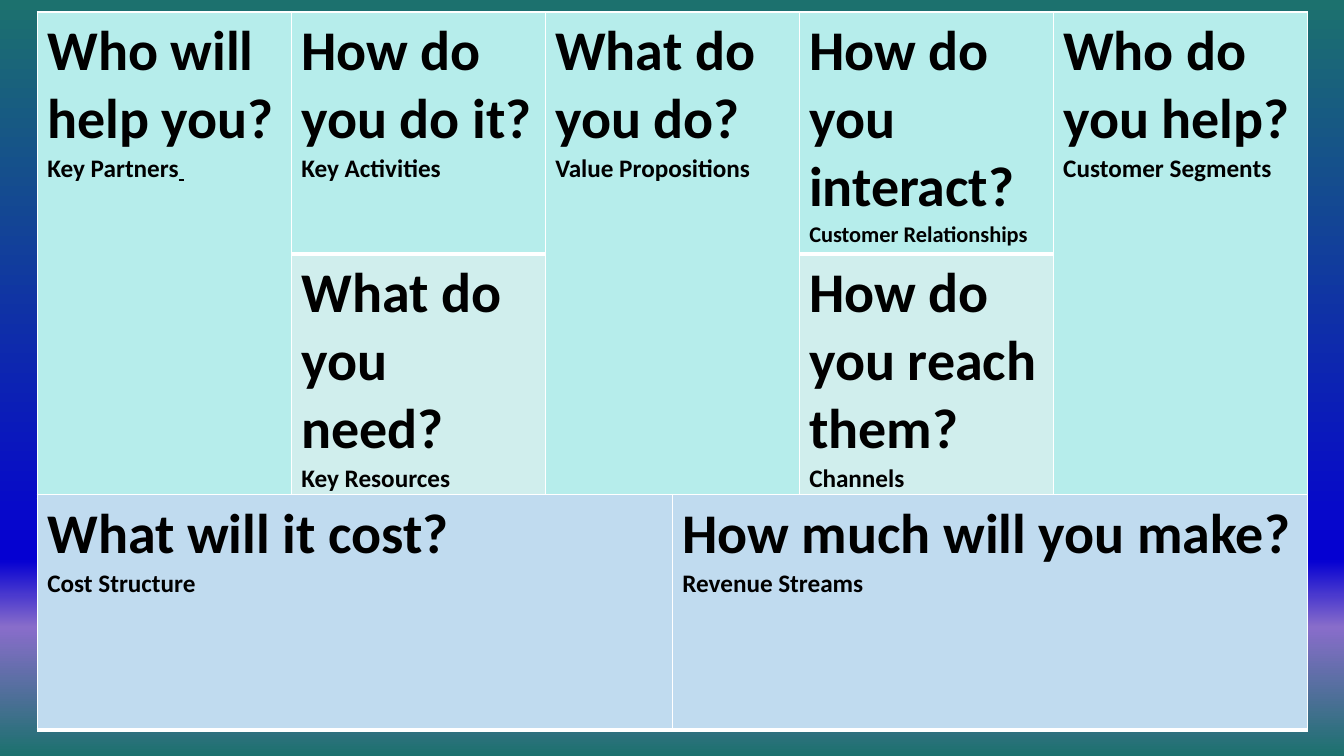
from dataclasses import dataclass

from lxml.etree import SubElement
from pptx import Presentation
from pptx.dml.color import RGBColor
from pptx.oxml.ns import qn
from pptx.util import Cm, Pt


@dataclass(frozen=True)
class Theme:
    font: str = "Calibri"
    text: str = "000000"
    border: str = "FFFFFF"
    aqua: str = "B6EDEB"
    pale_aqua: str = "D0EEED"
    blue: str = "C0DBEF"
    question_size: int = 40
    label_size: int = 18
    small_label_size: int = 16
    thin: int = 1
    thick: int = 3
    backdrop: tuple = ((0, "1C716E"), (74, "0500D2"), (83, "886DCA"), (100, "1C716E"))


class CanvasSlide:
    def __init__(self, slide, theme):
        self.slide = slide
        self.theme = theme

    def gradient_background(self):
        fill = self.slide.background.fill
        fill.gradient()
        fill.gradient_angle = 270
        stops = next(self.slide.element.iter(qn("a:gsLst")))
        for stop in list(stops):
            stops.remove(stop)
        for percent, color in self.theme.backdrop:
            stop = SubElement(stops, qn("a:gs"), pos=str(percent * 1000))
            SubElement(stop, qn("a:srgbClr"), val=color)

    def grid(self, left, top, width, row_height, rows, columns):
        table = self.slide.shapes.add_table(
            rows, columns, left, top, width, row_height * rows).table
        table.first_row = table.horz_banding = False
        for row in table.rows:
            row.height = row_height
        return table

    def borders(self, cell, top, bottom):
        thin = self.theme.thin
        properties = cell._tc.get_or_add_tcPr()
        for side, points in (("L", thin), ("R", thin), ("T", top), ("B", bottom)):
            line = SubElement(properties, qn(f"a:ln{side}"), w=str(Pt(points)))
            fill = SubElement(line, qn("a:solidFill"))
            SubElement(fill, qn("a:srgbClr"), val=self.theme.border)

    def paint(self, cell, color, top, bottom):
        self.borders(cell, top, bottom)
        cell.fill.solid()
        cell.fill.fore_color.rgb = RGBColor.from_string(color)

    def block(self, cell, question, label, label_size=None):
        cell.text_frame.text = f"{question}\n{label}"
        sizes = (self.theme.question_size, label_size or self.theme.label_size)
        for paragraph, size in zip(cell.text_frame.paragraphs, sizes):
            for run in paragraph.runs:
                self.format_run(run, size)

    def format_run(self, run, size):
        run.font.name = self.theme.font
        run.font.size = Pt(size)
        run.font.bold = True
        run.font.color.rgb = RGBColor.from_string(self.theme.text)

    def underlined_space(self, cell):
        run = cell.text_frame.paragraphs[-1].add_run()
        run.text = " "
        self.format_run(run, self.theme.label_size)
        run.font.underline = True


def main():
    theme = Theme()
    presentation = Presentation()
    presentation.slide_width, presentation.slide_height = Cm(33.87), Cm(19.05)
    canvas = CanvasSlide(
        presentation.slides.add_slide(presentation.slide_layouts[6]), theme)
    canvas.gradient_background()
    left, width = Cm(0.94), Cm(32)

    # Business model: five columns, three of them full height
    model = canvas.grid(left, Cm(0.3), width, Cm(5.89), rows=2, columns=5)
    for column in range(5):
        canvas.paint(model.cell(0, column), theme.aqua, theme.thin, theme.thick)
        canvas.paint(model.cell(1, column), theme.pale_aqua, theme.thick, theme.thin)
    for column in (0, 2, 4):
        model.cell(0, column).merge(model.cell(1, column))

    partners = model.cell(0, 0)
    canvas.block(partners, "Who will help you?", "Key Partners")
    canvas.underlined_space(partners)
    canvas.block(model.cell(0, 1), "How do you do it?", "Key Activities")
    canvas.block(model.cell(1, 1), "What do you need?", "Key Resources")
    canvas.block(model.cell(0, 2), "What do you do?", "Value Propositions")
    canvas.block(model.cell(0, 3), "How do you interact?", "Customer Relationships",
                 theme.small_label_size)
    canvas.block(model.cell(1, 3), "How do you reach them?", "Channels")
    canvas.block(model.cell(0, 4), "Who do you help?", "Customer Segments")

    # Finances: cost and revenue
    finances = canvas.grid(left, Cm(12.47), width, Cm(5.92), rows=1, columns=2)
    topics = (("What will it cost?", "Cost Structure"),
              ("How much will you make?", "Revenue Streams"))
    for column, (question, label) in enumerate(topics):
        cell = finances.cell(0, column)
        canvas.paint(cell, theme.blue, theme.thin, theme.thick)
        canvas.block(cell, question, label)

    presentation.save("out.pptx")


if __name__ == "__main__":
    main()
